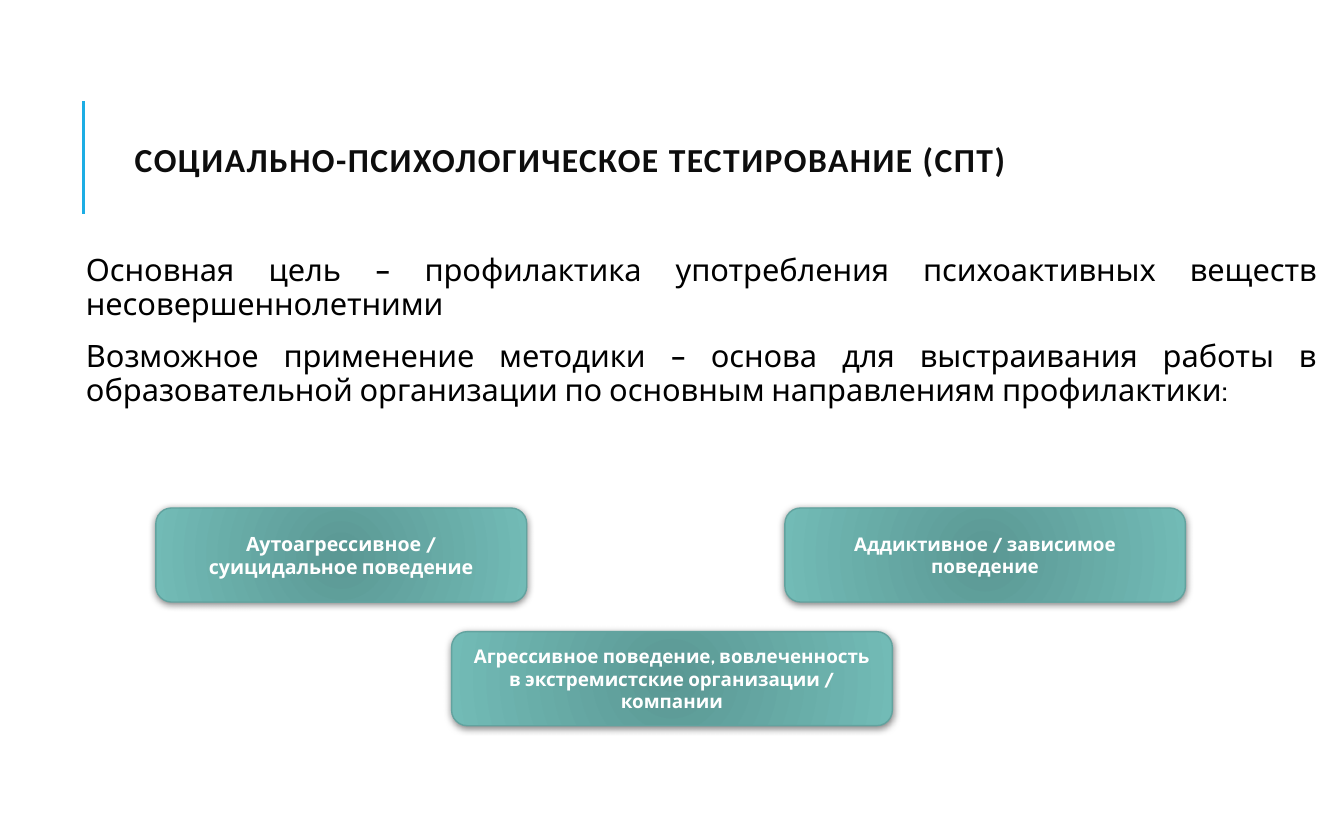
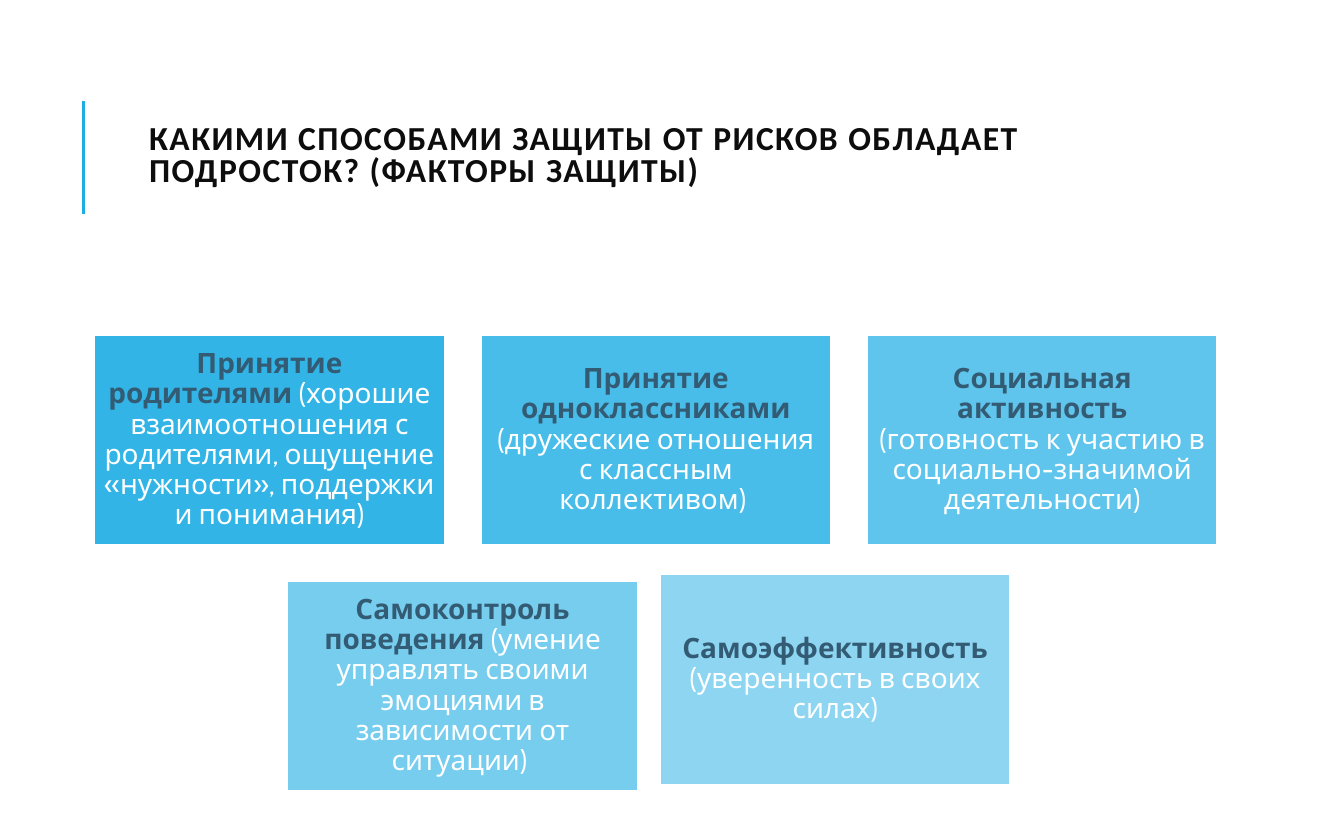
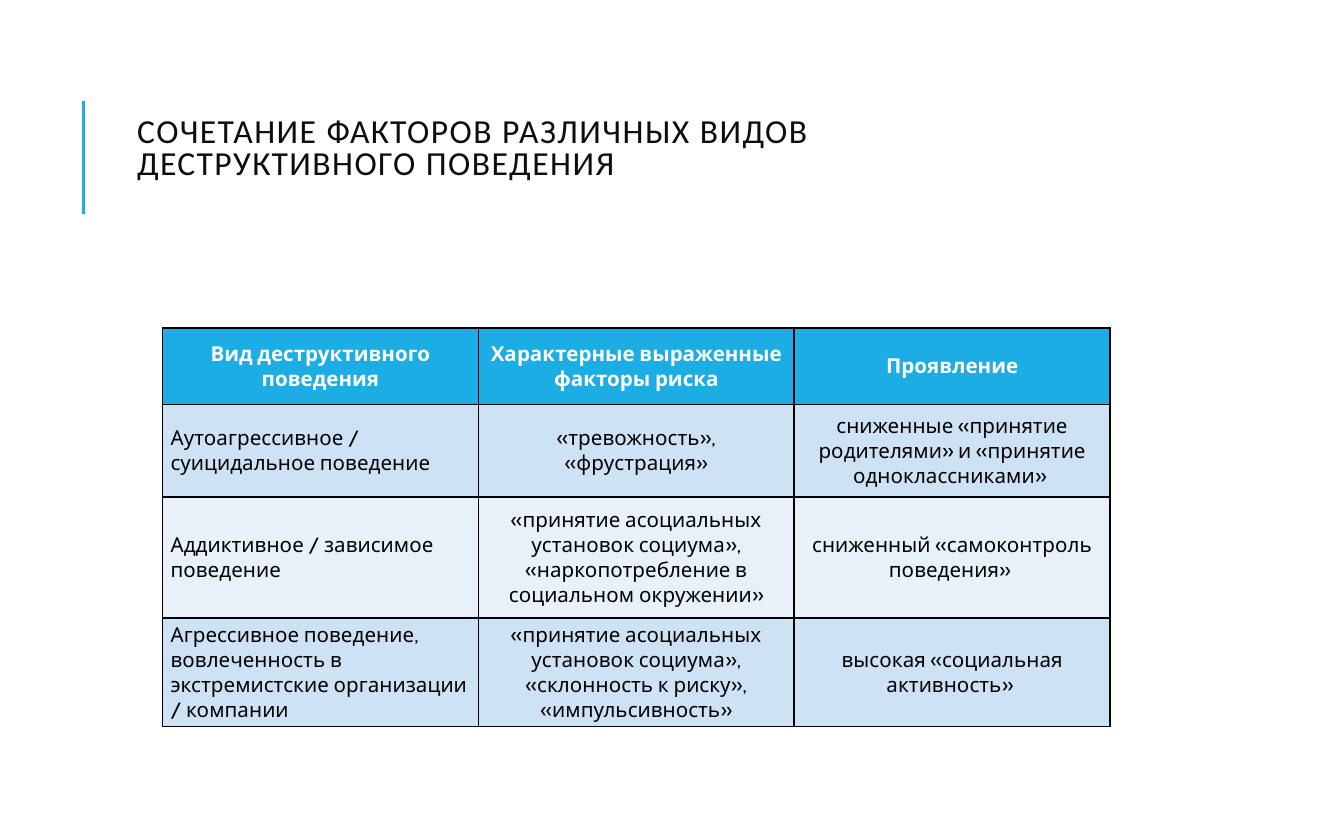
"""Build three slides on socio-psychological testing of teenagers."""
from dataclasses import dataclass
from typing import NamedTuple

from lxml.etree import SubElement
from pptx import Presentation
from pptx.dml.color import RGBColor
from pptx.enum.shapes import MSO_CONNECTOR, MSO_SHAPE
from pptx.enum.text import MSO_ANCHOR, MSO_AUTO_SIZE, PP_ALIGN
from pptx.oxml.ns import qn
from pptx.util import Inches, Pt


@dataclass(frozen=True)
class Theme:
    heading_font: str = "Calibri"
    body_font: str = "Cabin"
    accent: str = "1CADE4"
    ink: str = "0D0D0D"
    black: str = "000000"
    white: str = "FFFFFF"
    slate: str = "335B74"
    teal_dark: str = "5B9894"
    teal_light: str = "72BBB6"
    teal_line: str = "62A39F"
    band_dark: str = "CDE3F5"
    band_light: str = "E8F1FA"
    title_size: float = 18
    body_size: float = 16.5
    factor_size: float = 15
    table_size: float = 11


class Box(NamedTuple):
    left: float
    top: float
    width: float
    height: float

    def emu(self) -> list:
        return [Inches(v) for v in self]


class Behaviour(NamedTuple):
    text: str
    left: float
    top: float
    width: float
    size: float


class Factor(NamedTuple):
    name: str
    detail: str
    left: float
    top: float
    opacity: int


THEME = Theme()
BEHAVIOUR_HEIGHT = 0.7
FACTOR_WIDTH, FACTOR_HEIGHT = 2.61, 1.57
FACTOR_LEFT, FACTOR_TOP, FACTOR_PITCH = 0.7, 2.49, 2.875
COLUMN_WIDTH = 2.35
ROW_HEIGHTS = (0.57, 0.69, 0.9, 0.8)

GOALS = (
    "Основная цель – профилактика употребления психоактивных веществ несовершеннолетними",
    "Возможное применение методики – основа для выстраивания работы в образовательной "
    "организации по основным направлениям профилактики:",
)
BEHAVIOURS = (
    Behaviour("Аутоагрессивное / суицидальное поведение", 1.16, 3.78, 2.76, 10.5),
    Behaviour("Аддиктивное / зависимое поведение", 5.84, 3.78, 2.98, 10.1),
    Behaviour("Агрессивное поведение, вовлеченность в экстремистские организации / компании",
              3.36, 4.7, 3.28, 10.1),
)
FACTORS = (
    Factor("Принятие родителями ",
           "(хорошие взаимоотношения с родителями, ощущение «нужности», поддержки и понимания)",
           FACTOR_LEFT, FACTOR_TOP, 90),
    Factor("Принятие одноклассниками ", "(дружеские отношения с классным коллективом) ",
           FACTOR_LEFT + FACTOR_PITCH, FACTOR_TOP, 80),
    Factor("Социальная активность ", "(готовность к участию в социально-значимой деятельности)",
           FACTOR_LEFT + 2 * FACTOR_PITCH, FACTOR_TOP, 70),
    Factor("Самоконтроль поведения ",
           "(умение управлять своими эмоциями в зависимости от ситуации) ",
           FACTOR_LEFT + FACTOR_PITCH / 2, 4.32, 60),
    Factor("Самоэффективность", " (уверенность в своих силах)", 4.91, 4.27, 50),
)
TABLE_ROWS = (
    ("Вид деструктивного поведения", "Характерные выраженные факторы риска", "Проявление"),
    ("Аутоагрессивное / суицидальное поведение", "«тревожность», «фрустрация»",
     "сниженные «принятие родителями» и «принятие одноклассниками» "),
    ("Аддиктивное / зависимое поведение",
     "«принятие асоциальных установок социума», «наркопотребление в социальном окружении»",
     "сниженный «самоконтроль поведения» "),
    ("Агрессивное поведение, вовлеченность в экстремистские организации / компании",
     "«принятие асоциальных установок социума», «склонность к риску», «импульсивность»",
     "высокая «социальная активность» "),
)


def rgb(color: str) -> RGBColor:
    return RGBColor.from_string(color)


def write(tf, text: str, *, size: float, color: str, font: str = THEME.body_font,
          bold: bool = False, align=PP_ALIGN.LEFT, line: float = 1.0, before: float = 0,
          after: float = 0, tracking: float = 0, new: bool = False) -> None:
    """Append a formatted run to the last paragraph, or to a new one."""
    p = tf.add_paragraph() if new else tf.paragraphs[-1]
    p.alignment, p.line_spacing = align, line
    p.space_before, p.space_after = Pt(before), Pt(after)
    r = p.add_run()
    r.text = text
    r.font.name, r.font.size, r.font.bold = font, Pt(size), bold
    r.font.color.rgb = rgb(color)
    if tracking:
        r.font._element.set("spc", str(round(tracking * 100)))


def set_frame(tf, anchor, horizontal: float, vertical: float) -> None:
    """Set wrapping, anchor and insets of a text frame."""
    tf.word_wrap, tf.auto_size, tf.vertical_anchor = True, MSO_AUTO_SIZE.NONE, anchor
    tf.margin_left = tf.margin_right = Inches(horizontal)
    tf.margin_top = tf.margin_bottom = Inches(vertical)


def add_titled_slide(prs, title: str, box: Box, *, bold: bool = True, align=PP_ALIGN.LEFT):
    """Add a slide with the accent rule and its title."""
    s = prs.slides.add_slide(prs.slide_layouts[5])
    rule = s.shapes.add_connector(MSO_CONNECTOR.STRAIGHT, Inches(0.62), Inches(1.59),
                                  Inches(0.62), Inches(0.75))
    rule.line.color.rgb, rule.line.width = rgb(THEME.accent), Pt(1.5)
    SubElement(rule._element.spPr, qn("a:effectLst"))
    sp = s.shapes.title
    sp.left, sp.top, sp.width, sp.height = box.emu()
    set_frame(sp.text_frame, MSO_ANCHOR.MIDDLE, 0.1, 0.05)
    write(sp.text_frame, title, size=THEME.title_size, color=THEME.ink,
          font=THEME.heading_font, bold=bold, align=align, line=0.8, tracking=0.8)
    return s


def add_panel(s, kind, box: Box, line_color: str, line_width: float, inset: tuple):
    """Add an outlined shape ready for centred text."""
    sp = s.shapes.add_shape(kind, *box.emu())
    sp.shadow.inherit = False
    sp.line.color.rgb, sp.line.width = rgb(line_color), Pt(line_width)
    set_frame(sp.text_frame, MSO_ANCHOR.MIDDLE, *inset)
    return sp


def fill_radial(sp, inner: str, outer: str) -> None:
    """Fill a shape with a circular gradient."""
    sp.fill.gradient()
    for stop, color in zip(sp.fill.gradient_stops, (inner, outer)):
        stop.color.rgb = rgb(color)
    grad = sp._element.spPr.find(qn("a:gradFill"))
    grad.remove(grad.find(qn("a:lin")))
    circle = SubElement(grad, qn("a:path"), {"path": "circle"})
    SubElement(circle, qn("a:fillToRect"), dict.fromkeys("ltrb", "100000"))


def add_shadow(sp) -> None:
    """Give a shape a soft shadow below it."""
    effects = sp._element.spPr.find(qn("a:effectLst"))
    shadow = SubElement(effects, qn("a:outerShdw"), {
        "blurRad": str(Pt(4)), "dist": str(Pt(1)), "dir": "5400000", "rotWithShape": "0"})
    color = SubElement(shadow, qn("a:srgbClr"), {"val": THEME.black})
    SubElement(color, qn("a:alpha"), {"val": "50000"})


def add_behaviour(s, item: Behaviour) -> None:
    """Draw a rounded behaviour card."""
    box = Box(item.left, item.top, item.width, BEHAVIOUR_HEIGHT)
    sp = add_panel(s, MSO_SHAPE.ROUNDED_RECTANGLE, box, THEME.teal_line, 0.75, (0.1, 0.05))
    fill_radial(sp, THEME.teal_dark, THEME.teal_light)
    add_shadow(sp)
    write(sp.text_frame, item.text, size=item.size, color=THEME.white, bold=True,
          align=PP_ALIGN.CENTER)


def add_factor(s, item: Factor) -> None:
    """Draw a translucent protective factor tile."""
    box = Box(item.left, item.top, FACTOR_WIDTH, FACTOR_HEIGHT)
    sp = add_panel(s, MSO_SHAPE.RECTANGLE, box, THEME.white, 1.25, (0.06, 0.06))
    sp.fill.solid()
    sp.fill.fore_color.rgb = rgb(THEME.accent)
    color = sp._element.spPr.find(qn("a:solidFill")).find(qn("a:srgbClr"))
    SubElement(color, qn("a:alpha"), {"val": str(item.opacity * 1000)})
    for text, ink, bold in ((item.name, THEME.slate, True), (item.detail, THEME.white, False)):
        write(sp.text_frame, text, size=THEME.factor_size, color=ink, bold=bold,
              align=PP_ALIGN.CENTER, line=0.9)


def set_borders(cell) -> None:
    """Outline a table cell on all four sides."""
    props = cell._tc.get_or_add_tcPr()
    for i, side in enumerate("LRTB"):
        ln = SubElement(props, qn(f"a:ln{side}"), {"w": str(Pt(1))})
        fill = SubElement(ln, qn("a:solidFill"))
        SubElement(fill, qn("a:srgbClr"), {"val": THEME.black})
        props.insert(i, ln)


def add_risk_table(s) -> None:
    """Draw the table of behaviours and their risk factors."""
    columns = len(TABLE_ROWS[0])
    box = Box(1.21, 2.44, COLUMN_WIDTH * columns, sum(ROW_HEIGHTS))
    table = s.shapes.add_table(len(TABLE_ROWS), columns, *box.emu()).table
    for column in table.columns:
        column.width = Inches(COLUMN_WIDTH)
    for i, (texts, height) in enumerate(zip(TABLE_ROWS, ROW_HEIGHTS)):
        table.rows[i].height = Inches(height)
        header = i == 0
        band = THEME.accent if header else THEME.band_dark if i % 2 else THEME.band_light
        for j, text in enumerate(texts):
            cell = table.cell(i, j)
            cell.vertical_anchor = MSO_ANCHOR.MIDDLE
            cell.margin_left = cell.margin_right = Inches(0.06)
            cell.margin_top = cell.margin_bottom = Inches(0.03)
            cell.fill.solid()
            cell.fill.fore_color.rgb = rgb(band)
            set_borders(cell)
            write(cell.text_frame, text, size=THEME.table_size, bold=header,
                  color=THEME.white if header else THEME.black,
                  align=PP_ALIGN.CENTER if header or j else PP_ALIGN.LEFT)


def build_testing_slide(prs) -> None:
    """Build the slide on the goal of testing."""
    s = add_titled_slide(prs, "СОЦИАЛЬНО-ПСИХОЛОГИЧЕСКОЕ ТЕСТИРОВАНИЕ (СПТ)",
                         Box(0.87, 0.81, 6.75, 0.81), align=PP_ALIGN.CENTER)
    tf = s.shapes.add_textbox(*Box(0.52, 1.85, 9.33, 1.6).emu()).text_frame
    set_frame(tf, MSO_ANCHOR.TOP, 0.05, 0.05)
    tf.margin_left = Inches(0.12)
    for i, goal in enumerate(GOALS):
        write(tf, goal, size=THEME.body_size, color=THEME.black, align=PP_ALIGN.JUSTIFY,
              line=0.9, before=9, after=1.5, new=i > 0)
    for item in BEHAVIOURS:
        add_behaviour(s, item)


def build_protection_slide(prs) -> None:
    """Build the slide on protective factors."""
    s = add_titled_slide(
        prs, "КАКИМИ СПОСОБАМИ ЗАЩИТЫ ОТ РИСКОВ ОБЛАДАЕТ ПОДРОСТОК? (ФАКТОРЫ ЗАЩИТЫ)",
        Box(1.01, 0.76, 6.84, 0.81))
    for item in FACTORS:
        add_factor(s, item)


def build_combination_slide(prs) -> None:
    """Build the slide on combinations of factors."""
    s = add_titled_slide(prs, "СОЧЕТАНИЕ ФАКТОРОВ РАЗЛИЧНЫХ ВИДОВ ДЕСТРУКТИВНОГО ПОВЕДЕНИЯ",
                         Box(0.92, 0.81, 6.84, 0.61), bold=False)
    add_risk_table(s)


def main() -> None:
    """Build and save the presentation."""
    prs = Presentation()
    prs.slide_width, prs.slide_height = Inches(10), Inches(6.25)
    build_testing_slide(prs)
    build_protection_slide(prs)
    build_combination_slide(prs)
    prs.save("out.pptx")


if __name__ == "__main__":
    main()
